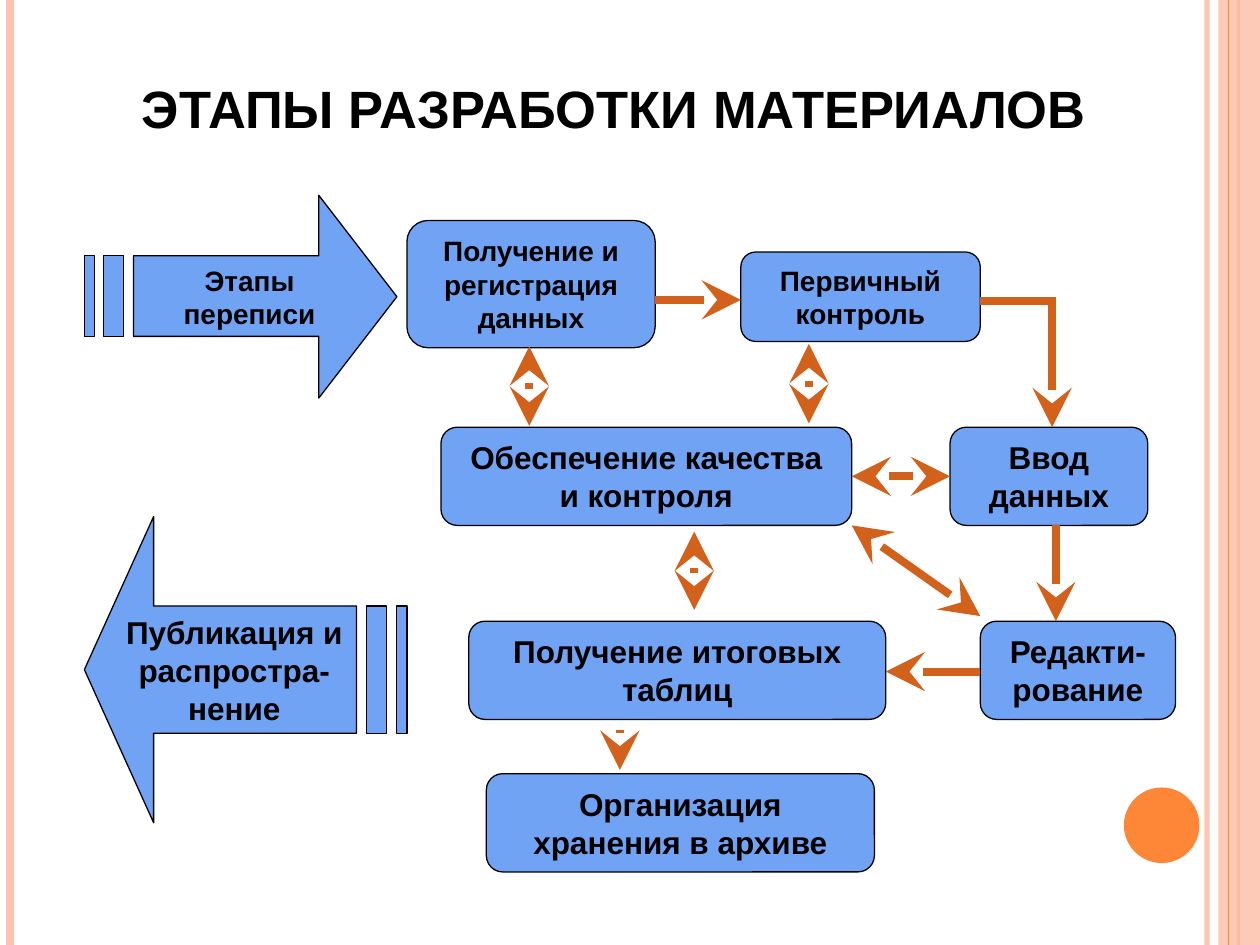
from lxml.etree import SubElement
from pptx import Presentation
from pptx.dml.color import RGBColor
from pptx.enum.shapes import MSO_CONNECTOR, MSO_SHAPE
from pptx.enum.text import MSO_ANCHOR, PP_ALIGN
from pptx.oxml.ns import qn
from pptx.util import Inches, Pt

BLACK = RGBColor(0x00, 0x00, 0x00)
BLUE = RGBColor(0x71, 0xA3, 0xF5)
RUST = RGBColor(0xD2, 0x61, 0x1C)
ORANGE = RGBColor(0xFE, 0x86, 0x37)
PEACH = RGBColor(0xFE, 0xC3, 0xAE)

COLUMNS, ROWS = 100, 75
BOX_HEIGHT = 7.8


class SlideBuilder:
    font = "Arial"

    def __init__(self, presentation):
        self.slide = presentation.slides.add_slide(presentation.slide_layouts[6])
        self.shapes = self.slide.shapes
        self.column = presentation.slide_width / COLUMNS
        self.row = presentation.slide_height / ROWS

    def point(self, column, row):
        return round(column * self.column), round(row * self.row)

    def area(self, left, top, width, height):
        return *self.point(left, top), *self.point(width, height)

    def set_text(self, shape, text, size, anchor=MSO_ANCHOR.MIDDLE):
        frame = shape.text_frame
        frame.word_wrap = True
        frame.vertical_anchor = anchor
        frame.text = text
        paragraph = frame.paragraphs[0]
        paragraph.alignment = PP_ALIGN.CENTER
        font = paragraph.runs[0].font
        font.name, font.size, font.bold = self.font, Pt(size), True
        font.color.rgb = BLACK

    def paint(self, shape, color, outlined=False):
        shape.shadow.inherit = False
        shape.fill.solid()
        shape.fill.fore_color.rgb = color
        if outlined:
            shape.line.color.rgb = BLACK
            shape.line.width = Pt(0.75)
        else:
            shape.line.fill.background()

    def set_opacity(self, shape, percent):
        for color in shape.element.spPr.iter(qn("a:srgbClr")):
            SubElement(color, qn("a:alpha"), val=str(percent * 1000))

    def title(self, text, size, *area):
        shape = self.shapes.add_textbox(*self.area(*area))
        self.set_text(shape, text, size, MSO_ANCHOR.BOTTOM)

    def plain(self, kind, color, *area):
        shape = self.shapes.add_shape(kind, *self.area(*area))
        self.paint(shape, color)
        return shape

    def box(self, text, left, top, width, height=BOX_HEIGHT, size=18):
        kind = MSO_SHAPE.FLOWCHART_ALTERNATE_PROCESS
        shape = self.shapes.add_shape(kind, *self.area(left, top, width, height))
        self.paint(shape, BLUE, outlined=True)
        self.set_text(shape, text, size)

    def block_arrow(self, text, size, contours, left_margin, right_margin):
        builder = self.shapes.build_freeform(*self.point(*contours[0][0]), scale=1.0)
        for index, contour in enumerate(contours):
            points = [self.point(*corner) for corner in contour]
            if index:
                builder.move_to(*points[0])
            builder.add_line_segments(points[1:], close=True)
        shape = builder.convert_to_shape()
        self.paint(shape, BLUE, outlined=True)
        self.set_text(shape, text, size)
        shape.text_frame.margin_left = round(left_margin * self.column)
        shape.text_frame.margin_right = round(right_margin * self.column)

    def line(self, start, end, color=RUST, width=4.5, heads=()):
        connector = self.shapes.add_connector(
            MSO_CONNECTOR.STRAIGHT, *self.point(*start), *self.point(*end))
        connector.line.color.rgb = color
        connector.line.width = Pt(width)
        properties = connector.element.spPr
        for head in heads:
            SubElement(properties.find(qn("a:ln")), qn(f"a:{head}"),
                       type="stealth", w="lg", len="lg")
        SubElement(properties, qn("a:effectLst"))
        return connector

    def arrow(self, start, end):
        self.line(start, end, heads=("tailEnd",))

    def double_arrow(self, start, end):
        self.line(start, end, heads=("headEnd", "tailEnd"))

    def stripe(self, column, color, width):
        return self.line((column, 0), (column, ROWS), color, width)


def bar(left, top, right, bottom):
    return [(left, top), (left, bottom), (right, bottom), (right, top)]


def pointer(tip, neck, tail, top, shaft_top, shaft_bottom, bottom):
    return [(neck, top), (neck, shaft_top), (tail, shaft_top), (tail, shaft_bottom),
            (neck, shaft_bottom), (neck, bottom), (tip, (top + bottom) / 2)]


def draw_background(builder):
    builder.set_opacity(builder.stripe(95.8, PEACH, 3), 93)
    builder.stripe(0.8, PEACH, 4.5)
    builder.stripe(98.3, ORANGE, 1.5)
    builder.set_opacity(builder.plain(MSO_SHAPE.RECTANGLE, PEACH, 96.7, 0, 3.3, ROWS), 87)
    builder.stripe(97.5, ORANGE, 0.75)
    builder.plain(MSO_SHAPE.OVAL, ORANGE, 89.2, 62.5, 6, 6)


def draw_stages(builder):
    builder.box("Первичный контроль", 58.8, 20, 19, 7.1, 16)
    builder.box("Получение и регистрация данных", 32.3, 17.5, 19.7, 10.1, 16)
    builder.box("Обеспечение качества и контроля", 35, 33.9, 32.6)
    builder.box("Ввод данных", 75.4, 33.9, 15.7)
    builder.box("Редакти-рование", 77.8, 49.3, 15.5)
    builder.box("Получение итоговых таблиц", 37.2, 49.3, 33.1)
    builder.box("Организация хранения в архиве", 38.6, 61.4, 30.8)
    builder.block_arrow("Этапы переписи", 16, [
        pointer(31.5, 25.3, 10.6, 15.5, 20.3, 26.7, 31.6),
        bar(8.2, 20.3, 9.8, 26.7),
        bar(6.7, 20.3, 7.5, 26.7)], 6.5, 5.1)
    builder.block_arrow("Публикация и распростра-нение", 18, [
        pointer(6.7, 12.2, 28.3, 41, 48.1, 58.2, 65.3),
        bar(29.1, 48.1, 30.7, 58.2),
        bar(31.5, 48.1, 32.3, 58.2)], 2.2, 4)


def draw_links(builder):
    builder.arrow((52, 23.8), (58.8, 23.8))
    builder.line((77.8, 23.9), (83.8, 23.9))
    builder.arrow((83.5, 24.1), (83.5, 33.9))
    builder.arrow((77.8, 53.3), (70.3, 53.3))
    builder.arrow((83.8, 41.7), (83.8, 49.3))
    builder.arrow((49.2, 57.9), (49.2, 61.1))
    builder.double_arrow((64.2, 33.6), (64.2, 27.3))
    builder.double_arrow((75.4, 37.8), (67.6, 37.8))
    builder.double_arrow((77.8, 48.9), (67.6, 41.7))
    builder.double_arrow((55.1, 48.4), (55.1, 42.2))
    builder.double_arrow((42, 27.5), (42, 33.8))


def main():
    presentation = Presentation()
    presentation.slide_width = Inches(10)
    presentation.slide_height = Inches(7.5)
    builder = SlideBuilder(presentation)
    draw_background(builder)
    builder.title("ЭТАПЫ РАЗРАБОТКИ МАТЕРИАЛОВ", 30, 5, 3, 87.5, 8.5)
    draw_stages(builder)
    draw_links(builder)
    presentation.save("out.pptx")


if __name__ == "__main__":
    main()
